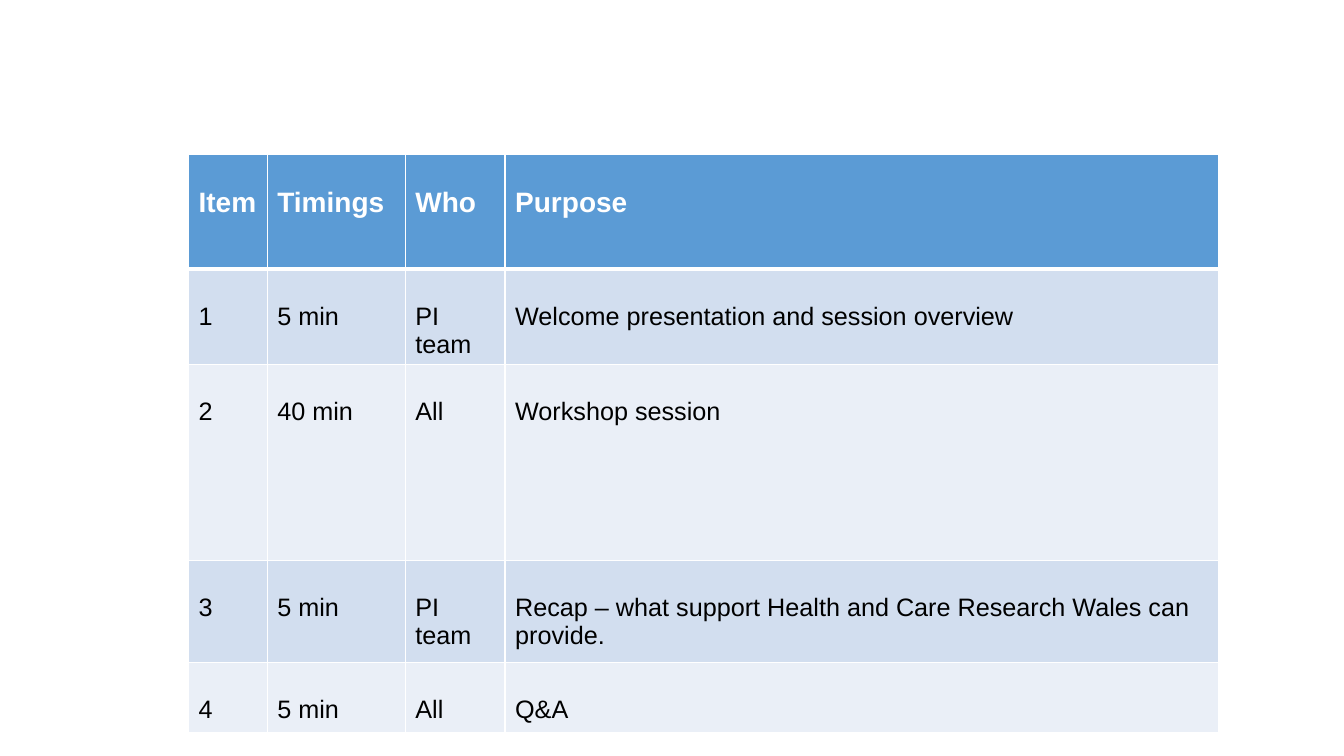
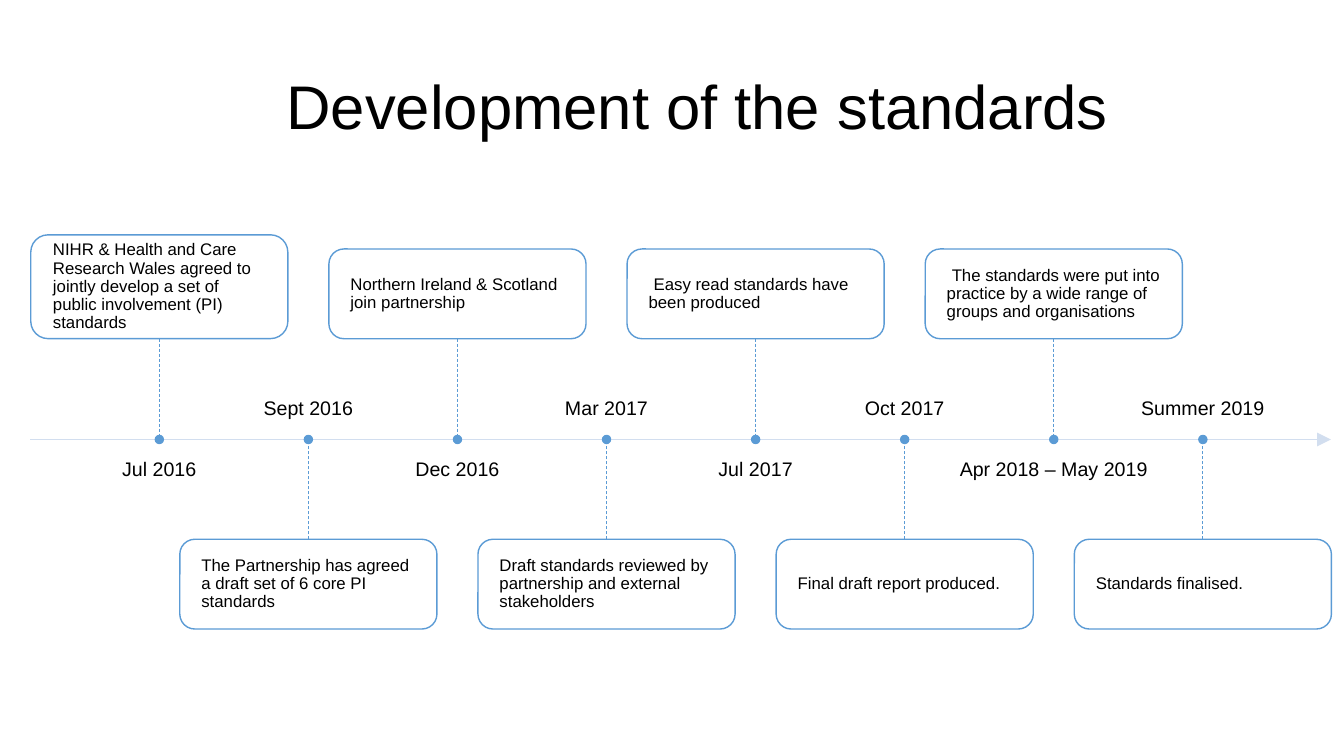
from dataclasses import dataclass

import pptx
import pptx.util
import pptx.dml.color
import pptx.enum.dml
import pptx.enum.shapes
import pptx.enum.text
import pptx.oxml.ns
from lxml import etree

Inches = pptx.util.Inches
Pt = pptx.util.Pt
Align = pptx.enum.text.PP_ALIGN
Anchor = pptx.enum.text.MSO_ANCHOR
Shape = pptx.enum.shapes.MSO_SHAPE
qn = pptx.oxml.ns.qn


@dataclass(frozen=True)
class Theme:
    font: str = "Arial"
    accent: str = "5B9BD5"
    band_dark: str = "D2DEEF"
    band_light: str = "EAEFF7"
    text: str = "000000"
    white: str = "FFFFFF"
    title_size: int = 44
    header_size: int = 20
    body_size: int = 18
    date_size: int = 14
    card_size: int = 12
    line_spacing: float = 0.9


THEME = Theme()

AGENDA = [
    ("Item", "Timings", "Who", "Purpose"),
    ("1", "5 min", "PI team", "Welcome presentation and session overview"),
    ("2", "40 min", "All", "Workshop session"),
    ("3", "5 min", "PI team",
     "Recap – what support Health and Care Research Wales can provide."),
    ("4", "5 min", "All", "Q&A"),
]
COLUMN_WIDTHS = (0.78, 1.37, 0.99, 7.08)
ROW_HEIGHTS = (1.14, 0.95, 1.94, 1.01, 0.7)

TITLE = "Development of the standards"

# Date, card text, card height, first-line indent
MILESTONES = [
    ("Jul 2016", "NIHR & Health and Care Research Wales agreed to jointly develop "
     "a set of public involvement (PI) standards", 1.03, 0),
    ("Sept 2016", "The Partnership has agreed a draft set of 6 core PI standards", 0.89, 0),
    ("Dec 2016", "Northern Ireland & Scotland join partnership", 0.89, 0),
    ("Mar 2017", "Draft standards reviewed by partnership and external stakeholders", 0.89, 0),
    ("Jul 2017", "Easy read standards have been produced", 0.89, 0.05),
    ("Oct 2017", "Final draft report produced.", 0.89, 0),
    ("Apr 2018 – May 2019", "The standards were put into practice by a wide range of "
     "groups and organisations", 0.89, 0.05),
    ("Summer 2019", "Standards finalised.", 0.89, 0),
]
AXIS_LEFT, AXIS_RIGHT, AXIS_Y = 0.3, 13.2, 4.36
FIRST_CENTRE, LAST_CENTRE = 1.58, 11.93
CARD_WIDTH, CARD_INSET = 2.55, 0.17
UPPER_CARD_BOTTOM, LOWER_CARD_TOP = 3.36, 5.35
DATE_WIDTH, DATE_HEIGHT, DATE_GAP = 2.24, 0.59, 0.2
DOT_SIZE = 0.08


def rgb(colour):
    return pptx.dml.color.RGBColor.from_string(colour)


def box(left, top, width, height):
    return Inches(left), Inches(top), Inches(width), Inches(height)


def write(text_frame, text, size, colour=THEME.text, bold=False,
          align=Align.LEFT, spacing=None):
    text_frame.text = text
    text_frame.word_wrap = True
    paragraph = text_frame.paragraphs[0]
    paragraph.alignment = align
    paragraph.line_spacing = spacing
    for run in paragraph.runs:
        run.font.name = THEME.font
        run.font.size = Pt(size)
        run.font.bold = bold
        run.font.color.rgb = rgb(colour)
    return paragraph


def set_insets(text_frame, inset):
    text_frame.margin_left = text_frame.margin_right = Inches(inset)
    text_frame.margin_top = text_frame.margin_bottom = Inches(inset)


def set_borders(cell, colour, top, bottom):
    """Border the cell; top and bottom are widths in points, the sides are 1."""
    properties = cell._tc.get_or_add_tcPr()
    for tag, width in (("a:lnL", 1), ("a:lnR", 1), ("a:lnT", top), ("a:lnB", bottom)):
        line = etree.SubElement(properties, qn(tag), w=str(Pt(width)))
        fill = etree.SubElement(line, qn("a:solidFill"))
        etree.SubElement(fill, qn("a:srgbClr"), val=colour)


def add_line(slide, start, end, colour, width):
    ends = [Inches(value) for value in (*start, *end)]
    connector = slide.shapes.add_connector(
        pptx.enum.shapes.MSO_CONNECTOR.STRAIGHT, *ends)
    connector.line.color.rgb = rgb(colour)
    connector.line.width = Pt(width)
    etree.SubElement(connector._element.spPr, qn("a:effectLst"))
    return connector


def add_preset(slide, kind, place, fill):
    shape = slide.shapes.add_shape(kind, *place)
    shape.shadow.inherit = False
    shape.fill.solid()
    shape.fill.fore_color.rgb = rgb(fill)
    shape.line.color.rgb = rgb(THEME.accent)
    shape.line.width = Pt(1)
    return shape


def add_agenda_slide(presentation):
    slide = presentation.slides.add_slide(presentation.slide_layouts[6])
    table = slide.shapes.add_table(
        len(AGENDA), len(COLUMN_WIDTHS),
        *box(1.87, 1.53, sum(COLUMN_WIDTHS), sum(ROW_HEIGHTS))).table
    for column, width in zip(table.columns, COLUMN_WIDTHS):
        column.width = Inches(width)
    for index, (row, height, texts) in enumerate(zip(table.rows, ROW_HEIGHTS, AGENDA)):
        row.height = Inches(height)
        header = index == 0
        if header:
            fill, size, colour = THEME.accent, THEME.header_size, THEME.white
        else:
            fill = THEME.band_dark if index % 2 else THEME.band_light
            size, colour = THEME.body_size, THEME.text
        for cell, text in zip(row.cells, texts):
            set_borders(cell, THEME.white, 3 if index == 1 else 1, 3 if header else 1)
            cell.fill.solid()
            cell.fill.fore_color.rgb = rgb(fill)
            cell.margin_top = Inches(0.33)
            write(cell.text_frame, text, size, colour, bold=header)


def add_title(slide, text):
    title = slide.shapes.title
    title.left, title.top, title.width, title.height = box(2.74, 0.62, 10.5, 0.93)
    title.text_frame.auto_size = pptx.enum.text.MSO_AUTO_SIZE.NONE
    title.text_frame.vertical_anchor = Anchor.MIDDLE
    write(title.text_frame, text, THEME.title_size, spacing=THEME.line_spacing)


def add_axis(slide):
    axis = add_line(slide, (AXIS_LEFT, AXIS_Y), (AXIS_RIGHT, AXIS_Y), THEME.band_dark, 1)
    etree.SubElement(axis.line._get_or_add_ln(), qn("a:tailEnd"),
                     type="triangle", w="lg", len="lg")


def add_milestone(slide, centre, above, date, text, height, indent):
    """Place a card above or below the axis, with its date on the other side."""
    if above:
        card_top, card_edge = UPPER_CARD_BOTTOM - height, UPPER_CARD_BOTTOM
        date_top, date_anchor = AXIS_Y + DATE_GAP, Anchor.TOP
    else:
        card_top = card_edge = LOWER_CARD_TOP
        date_top, date_anchor = AXIS_Y - DATE_GAP - DATE_HEIGHT, Anchor.BOTTOM

    card = add_preset(slide, Shape.ROUNDED_RECTANGLE,
                      box(centre - CARD_WIDTH / 2, card_top, CARD_WIDTH, height),
                      THEME.white)
    card.text_frame.vertical_anchor = Anchor.MIDDLE
    set_insets(card.text_frame, CARD_INSET)
    paragraph = write(card.text_frame, text, THEME.card_size, spacing=THEME.line_spacing)
    if indent:
        paragraph._p.get_or_add_pPr().set("indent", str(Inches(indent)))

    stem = add_line(slide, (centre, card_edge), (centre, AXIS_Y), THEME.accent, 0.5)
    stem.line.dash_style = pptx.enum.dml.MSO_LINE.DASH

    label = slide.shapes.add_textbox(
        *box(centre - DATE_WIDTH / 2, date_top, DATE_WIDTH, DATE_HEIGHT))
    label.text_frame.vertical_anchor = date_anchor
    set_insets(label.text_frame, 0)
    write(label.text_frame, date, THEME.date_size, align=Align.CENTER,
          spacing=THEME.line_spacing)

    add_preset(slide, Shape.OVAL,
               box(centre - DOT_SIZE / 2, AXIS_Y - DOT_SIZE / 2, DOT_SIZE, DOT_SIZE),
               THEME.accent)


def add_timeline_slide(presentation):
    slide = presentation.slides.add_slide(presentation.slide_layouts[5])
    add_title(slide, TITLE)
    add_axis(slide)
    step = (LAST_CENTRE - FIRST_CENTRE) / (len(MILESTONES) - 1)
    for index, milestone in enumerate(MILESTONES):
        add_milestone(slide, FIRST_CENTRE + index * step, index % 2 == 0, *milestone)


def main():
    presentation = pptx.Presentation()
    presentation.slide_width = Inches(13.33)
    presentation.slide_height = Inches(7.5)
    add_agenda_slide(presentation)
    add_timeline_slide(presentation)
    presentation.save("out.pptx")


if __name__ == "__main__":
    main()
